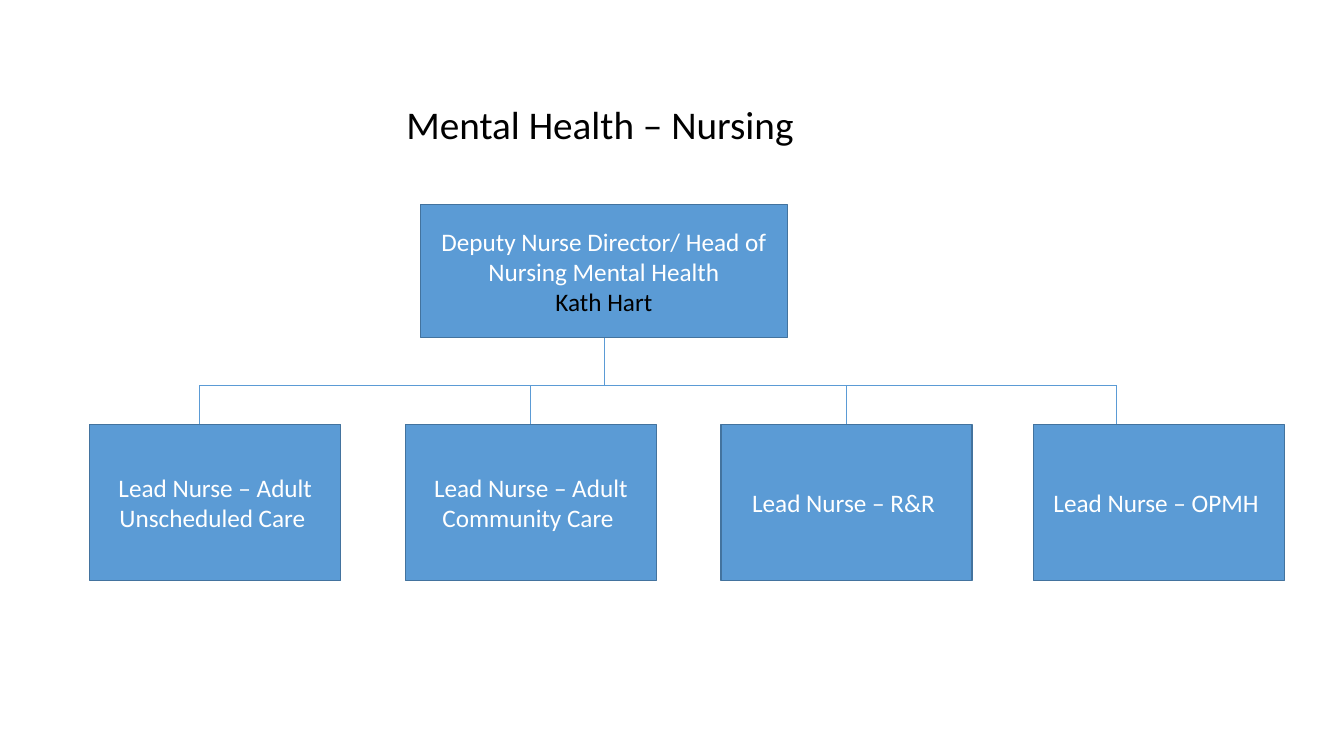
from lxml import etree
from pptx import Presentation
from pptx.dml.color import RGBColor
from pptx.enum.shapes import MSO_CONNECTOR, MSO_SHAPE
from pptx.enum.text import MSO_ANCHOR, PP_ALIGN
from pptx.util import Inches, Pt

RECTANGLE = MSO_SHAPE.RECTANGLE
STRAIGHT = MSO_CONNECTOR.STRAIGHT
MIDDLE, TOP = MSO_ANCHOR.MIDDLE, MSO_ANCHOR.TOP
CENTER = PP_ALIGN.CENTER
BLUE = RGBColor(0x5B, 0x9B, 0xD5)
DARK_BLUE = RGBColor(0x43, 0x73, 0x9E)
WHITE = RGBColor(0xFF, 0xFF, 0xFF)
BLACK = RGBColor(0x00, 0x00, 0x00)
A_NS = "http://schemas.openxmlformats.org/drawingml/2006/main"

BUS_Y = 3.82
LEAD_TOP, LEAD_WIDTH, LEAD_HEIGHT = 4.21, 2.49, 1.55

prs = Presentation()
prs.slide_width, prs.slide_height = Inches(13.33), Inches(7.5)
slide = prs.slides.add_slide(prs.slide_layouts[5])


def add_post(left, top, width, height, lines):
    """Add a box; lines holds (text, colour) pairs, one per paragraph."""
    post = slide.shapes.add_shape(
        RECTANGLE, Inches(left), Inches(top), Inches(width), Inches(height))
    post.shadow.inherit = False
    post.fill.solid()
    post.fill.fore_color.rgb = BLUE
    post.line.color.rgb = DARK_BLUE
    post.line.width = Pt(1)
    frame = post.text_frame
    frame.word_wrap = True
    frame.vertical_anchor = MIDDLE
    frame.text = "\n".join(text for text, _ in lines)
    for paragraph, (_, color) in zip(frame.paragraphs, lines):
        paragraph.alignment = CENTER
        paragraph.font.name = "Calibri"
        paragraph.font.size = Pt(18)
        paragraph.font.color.rgb = color
    return post


def add_branch(x1, y1, x2, y2):
    branch = slide.shapes.add_connector(
        STRAIGHT, Inches(x1), Inches(y1), Inches(x2), Inches(y2))
    branch.line.color.rgb = BLUE
    branch.line.width = Pt(0.5)
    etree.SubElement(branch.line._get_or_add_ln().getparent(), f"{{{A_NS}}}effectLst")
    return branch


# Title
title = slide.shapes.title
title.left, title.top = Inches(2.26), Inches(0.94)
title.width, title.height = Inches(7.38), Inches(0.57)
title.text_frame.text = "Mental Health – Nursing"
title.text_frame.vertical_anchor = TOP
heading = title.text_frame.paragraphs[0]
heading.alignment = CENTER
heading.font.name = "Calibri"
heading.font.size = Pt(28)
heading.font.color.rgb = BLACK

# Head of nursing, with the trunk down to the horizontal line
director = add_post(4.17, 2.03, 3.64, 1.32, [
    ("Deputy Nurse Director/ Head of Nursing Mental Health", WHITE),
    ("Kath Hart", BLACK),
])
trunk = add_branch(5.99, 3.35, 5.99, BUS_Y)
trunk.begin_connect(director, 2)

# Lead nurses: text, box left, x of the drop line
leads = [
    ("Lead Nurse – Adult Unscheduled Care ", 0.89, 1.98),
    ("Lead Nurse – Adult Community Care ", 4.02, 5.29),
    ("Lead Nurse – R&R ", 7.15, 8.4),
    ("Lead Nurse – OPMH ", 10.25, 11.07),
]
add_branch(leads[0][2], BUS_Y, leads[-1][2], BUS_Y)
for role, left, drop_x in leads:
    lead = add_post(left, LEAD_TOP, LEAD_WIDTH, LEAD_HEIGHT, [(role, WHITE)])
    drop = add_branch(drop_x, BUS_Y, drop_x, LEAD_TOP)
    # Join only the drops that meet the middle of the box
    if abs(drop_x - left - LEAD_WIDTH / 2) < 0.05:
        drop.begin_x = lead.left + lead.width // 2
        drop.end_connect(lead, 0)

prs.save("out.pptx")
